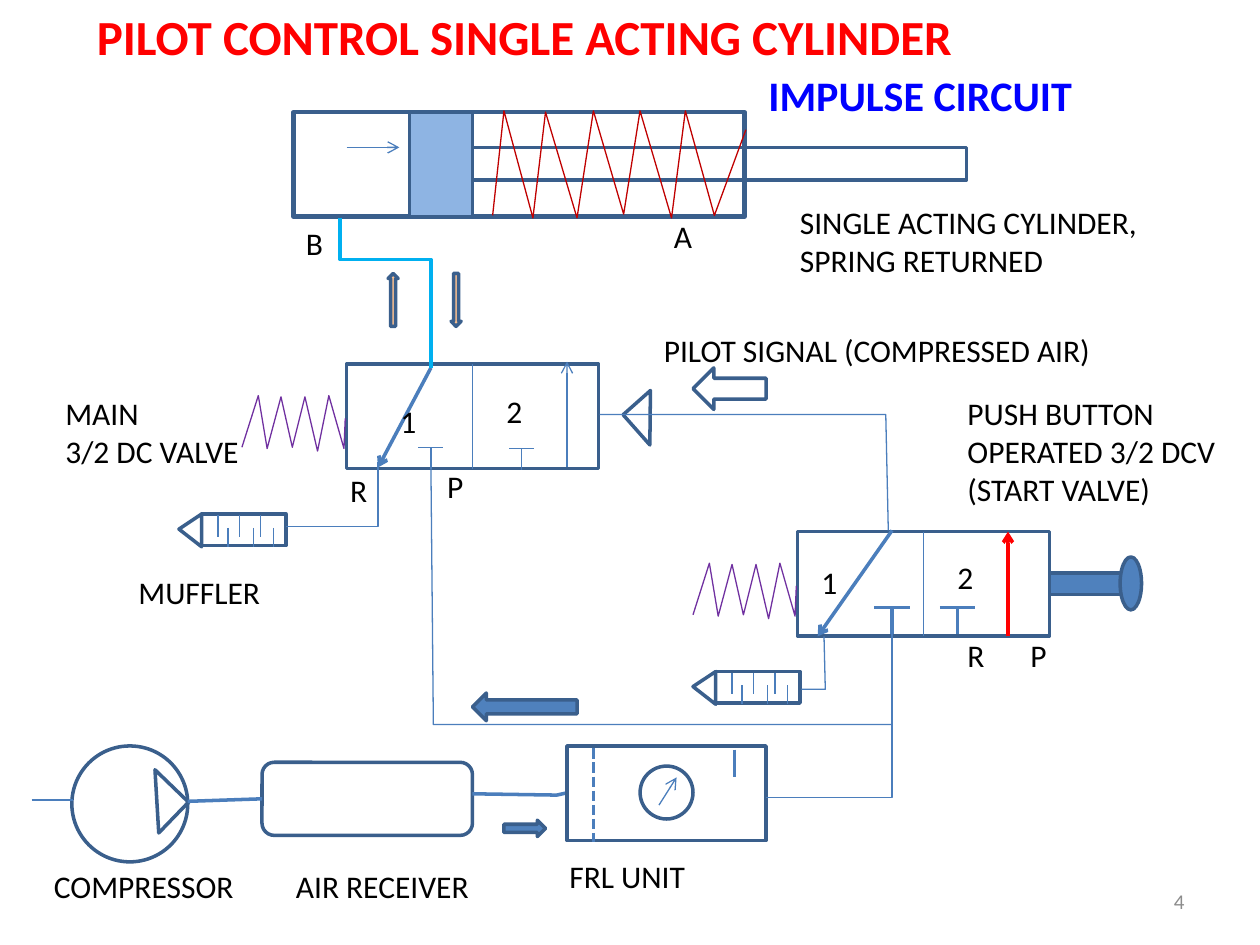
from pptx import Presentation
from pptx.dml.color import RGBColor
from pptx.enum.dml import MSO_LINE
from pptx.enum.shapes import MSO_CONNECTOR, MSO_SHAPE
from pptx.enum.text import MSO_ANCHOR, MSO_AUTO_SIZE, PP_ALIGN
from pptx.oxml.ns import qn
from pptx.util import Inches, Pt
from lxml.etree import SubElement

HUES = {
    "edge": "3A5F8C", "wire": "4B7EBC", "solid": "4F81BD", "piston": "8EB4E3",
    "peach": "FAC090", "air": "00B0F0", "coil": "7030A0", "spring": "C00000",
    "red": "FF0000", "blue": "0000FF", "black": "000000", "gray": "8C8C8C",
}


def hue(name):
    return RGBColor.from_string(HUES[name])


def assign(item, values):
    for name, value in values.items():
        setattr(item, name, value)


def stroke(item, color, width):
    item.line.color.rgb = hue(color)
    item.line.width = Pt(width)


def shape(slide, kind, x, y, w, h, fill=None, width=2, turn=0):
    item = slide.shapes.add_shape(kind, Inches(x), Inches(y), Inches(w), Inches(h))
    item.shadow.inherit = False
    item.rotation = turn
    if fill:
        item.fill.solid()
        item.fill.fore_color.rgb = hue(fill)
    else:
        item.fill.background()
    stroke(item, "edge", width)
    return item


def link(slide, x1, y1, x2, y2, color="wire", width=0.75, arrow=False, dash=None):
    item = slide.shapes.add_connector(
        MSO_CONNECTOR.STRAIGHT, Inches(x1), Inches(y1), Inches(x2), Inches(y2))
    stroke(item, color, width)
    if dash:
        item.line.dash_style = dash
    props = item.element.spPr
    if arrow:
        SubElement(props.find(qn("a:ln")), qn("a:tailEnd"), type="arrow")
    SubElement(props, qn("a:effectLst"))
    return item


def trace(slide, points, color="wire", width=0.75, close=False):
    spots = [(Inches(x), Inches(y)) for x, y in points]
    pen = slide.shapes.build_freeform(*spots[0])
    pen.add_line_segments(spots[1:], close=close)
    item = pen.convert_to_shape()
    item.shadow.inherit = False
    item.fill.background()
    stroke(item, color, width)


def label(slide, text, x, y, w, h=0.4, size=18, color="black", bold=False, frame=None, align=None):
    box = slide.shapes.add_textbox(Inches(x), Inches(y), Inches(w), Inches(h)).text_frame
    assign(box, {"word_wrap": True, "auto_size": MSO_AUTO_SIZE.SHAPE_TO_FIT_TEXT, **(frame or {})})
    box.text = text
    for para in box.paragraphs:
        para.alignment = align
        font = para.runs[0].font
        assign(font, {"name": "Calibri", "size": Pt(size), "bold": bold})
        font.color.rgb = hue(color)


def coil(slide, x, y):
    steps = [(0, 0.41), (0.13, 0), (0.2, 0.42), (0.31, 0.01), (0.4, 0.41),
             (0.5, 0.01), (0.6, 0.44), (0.69, 0), (0.81, 0.42), (0.82, 0.18)]
    trace(slide, [(x + dx, y + dy) for dx, dy in steps], "coil")


def muffler(slide, x, y):
    shape(slide, MSO_SHAPE.RECTANGLE, x + 0.18, y, 0.67, 0.25)
    trace(slide, [(x + 0.18, y), (x + 0.18, y + 0.26), (x, y + 0.12)], "edge", 2, True)
    for dx in (0.31, 0.48, 0.65):
        link(slide, x + dx, y + 0.01, x + dx, y + 0.18)
    for dx in (0.39, 0.59, 0.75):
        link(slide, x + dx, y + 0.11, x + dx, y + 0.26)


def port(slide, x, y, half, stem, width):
    link(slide, x - half, y, x + half, y, width=width)
    link(slide, x, y, x, y + stem, width=width)


def valve(slide, x, y):
    body = shape(slide, MSO_SHAPE.RECTANGLE, x, y, 2, 0.83)
    split = link(slide, x + 1, y, x + 1, y + 0.83)
    split.begin_connect(body, 0)
    split.end_connect(body, 2)
    coil(slide, x - 0.83, y + 0.25)


def cylinder(slide):
    shape(slide, MSO_SHAPE.RECTANGLE, 2.33, 0.89, 3.58, 0.83, width=2.5)
    shape(slide, MSO_SHAPE.RECTANGLE, 3.25, 0.89, 0.5, 0.83, "piston")
    shape(slide, MSO_SHAPE.RECTANGLE, 3.75, 1.17, 3.92, 0.26)
    link(slide, 2.75, 1.17, 3.17, 1.17, arrow=True)
    trace(slide, [(3.91, 1.71), (4, 0.88), (4.23, 1.73), (4.33, 0.89), (4.58, 1.73),
                  (4.71, 0.88), (4.95, 1.7), (5.08, 0.88), (5.33, 1.73), (5.44, 0.88),
                  (5.67, 1.71), (5.92, 1.03)], "spring")


def valves(slide):
    valve(slide, 2.75, 2.89)
    link(slide, 3.42, 2.92, 3, 3.71, width=2, arrow=True)
    link(slide, 4.5, 3.71, 4.5, 2.87, arrow=True)
    port(slide, 3.42, 3.55, 0.1, 0.17, 0.75)
    port(slide, 4.14, 3.56, 0.1, 0.17, 0.75)
    shape(slide, MSO_SHAPE.RIGHT_TRIANGLE, 5, 3.17, 0.32, 0.29, turn=48.4)
    muffler(slide, 1.42, 4.08)

    valve(slide, 6.33, 4.22)
    link(slide, 7.08, 4.21, 6.49, 5.05, width=2, arrow=True)
    link(slide, 8, 5.05, 8, 4.22, "red", 2, True)
    port(slide, 7.08, 4.82, 0.14, 0.21, 2)
    port(slide, 7.6, 4.82, 0.14, 0.21, 2)
    shape(slide, MSO_SHAPE.RECTANGLE, 8.33, 4.55, 0.58, 0.17, "solid")
    shape(slide, MSO_SHAPE.OVAL, 8.89, 4.42, 0.17, 0.42, "solid")
    muffler(slide, 5.5, 5.33)


def supply(slide):
    shape(slide, MSO_SHAPE.OVAL, 0.57, 5.92, 0.92, 0.92)
    shape(slide, MSO_SHAPE.RIGHT_TRIANGLE, 1.06, 6.19, 0.37, 0.34, turn=224)
    link(slide, 0.25, 6.35, 0.58, 6.35)
    tank = shape(slide, MSO_SHAPE.ROUNDED_RECTANGLE, 2.08, 6.05, 1.67, 0.58)
    feed = link(slide, 1.49, 6.36, 2.08, 6.36, width=2)
    feed.end_connect(tank, 1)
    trace(slide, [(3.75, 6.3), (4.42, 6.31), (4.51, 6.29)], width=2)

    shape(slide, MSO_SHAPE.RECTANGLE, 4.5, 5.92, 1.58, 0.75)
    link(slide, 4.71, 5.94, 4.71, 6.68, width=2, dash=MSO_LINE.SQUARE_DOT)
    link(slide, 5.83, 5.95, 5.83, 6.17, width=2)
    shape(slide, MSO_SHAPE.OVAL, 5.08, 6.08, 0.42, 0.42)
    link(slide, 5.23, 6.39, 5.37, 6.17, arrow=True)


def pipes(slide):
    trace(slide, [(2.7, 1.73), (2.7, 2.06), (3.42, 2.06), (3.42, 2.92)], "air", 2)
    for route in (
        [(2.27, 4.18), (3, 4.18), (3, 3.67)],
        [(4.76, 3.29), (7.03, 3.29), (7.05, 4.21)],
        [(6.36, 5.47), (6.55, 5.47), (6.54, 5.05)],
        [(7.08, 5), (7.08, 6.33), (6.08, 6.33)],
        [(3.42, 3.67), (3.44, 5.75), (7.08, 5.75)],
    ):
        trace(slide, route)


def flows(slide):
    for kind, x, y, w, h, fill in (
        (MSO_SHAPE.UP_ARROW, 3.08, 2.17, 0.08, 0.42, "peach"),
        (MSO_SHAPE.DOWN_ARROW, 3.58, 2.17, 0.08, 0.42, "peach"),
        (MSO_SHAPE.LEFT_ARROW, 5.5, 2.92, 0.58, 0.33, None),
        (MSO_SHAPE.LEFT_ARROW, 3.75, 5.5, 0.83, 0.22, "solid"),
        (MSO_SHAPE.RIGHT_ARROW, 4, 6.51, 0.33, 0.13, "solid"),
    ):
        shape(slide, kind, x, y, w, h, fill)


def labels(slide):
    label(slide, "PILOT CONTROL SINGLE ACTING CYLINDER", 0.67, 0, 7.92, 0.57, 28, "red", True)
    label(slide, "IMPULSE CIRCUIT", 6, 0.5, 3, 0.5, 24, "blue", True)
    for text, x, y, w, h in (
        ("MAIN\n3/2 DC VALVE", 0.42, 3.08, 3.58, 0.71),
        ("SINGLE ACTING CYLINDER, SPRING RETURNED", 6.25, 1.56, 3.17, 0.71),
        ("PUSH BUTTON OPERATED 3/2 DCV (START VALVE)", 7.58, 3.08, 2.42, 1.01),
    ):
        label(slide, text, x, y, w, h)
    for text, x, y, w in (
        ("A", 5.25, 1.67, 0.75), ("B", 2.33, 1.73, 0.42),
        ("R", 2.68, 3.69, 0.33), ("P", 3.45, 3.66, 0.25),
        ("1", 3.08, 3.14, 0.25), ("2", 3.92, 3.06, 0.5),
        ("R", 7.58, 5, 0.25), ("P", 8.08, 5, 0.33),
        ("1", 6.42, 4.42, 0.25), ("2", 7.5, 4.38, 0.5),
        ("PILOT SIGNAL (COMPRESSED AIR)", 5.17, 2.58, 3.75),
        ("MUFFLER", 1, 4.5, 1.67), ("FRL UNIT", 4.42, 6.75, 2.08),
        ("AIR RECEIVER", 2.25, 6.83, 1.92), ("COMPRESSOR", 0.33, 6.83, 1.75),
    ):
        label(slide, text, x, y, w)
    frame = {"auto_size": MSO_AUTO_SIZE.NONE, "vertical_anchor": MSO_ANCHOR.MIDDLE}
    label(slide, "4", 7.17, 6.95, 2.33, size=12, color="gray", frame=frame, align=PP_ALIGN.RIGHT)


def main():
    deck = Presentation()
    assign(deck, {"slide_width": Inches(10), "slide_height": Inches(7.5)})
    slide = deck.slides.add_slide(deck.slide_layouts[6])
    for draw in (cylinder, valves, supply, pipes, flows, labels):
        draw(slide)
    deck.save("out.pptx")


if __name__ == "__main__":
    main()
